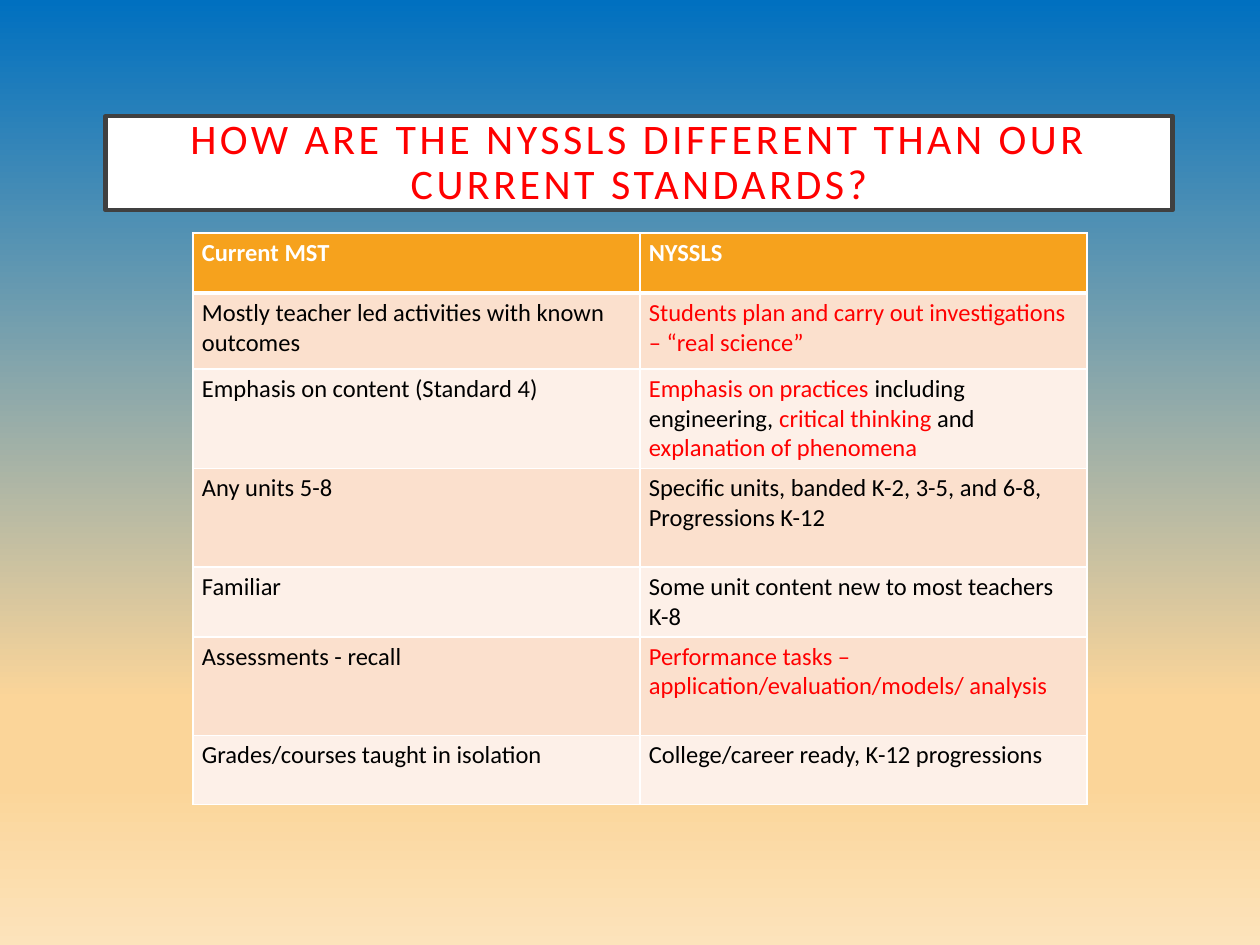
from pptx import Presentation
from pptx.dml.color import RGBColor
from pptx.enum.shapes import MSO_SHAPE
from pptx.enum.text import MSO_ANCHOR, PP_ALIGN
from pptx.oxml import parse_xml
from pptx.oxml.ns import nsdecls
from pptx.util import Cm, Pt


def paint(color, value):
    color.rgb = RGBColor.from_string(value)


def write(para, text, size, value, bold=False):
    run = para.add_run()
    run.text = text
    for key, val in {"name": "Calibri", "size": Pt(size), "bold": bold}.items():
        setattr(run.font, key, val)
    paint(run.font.color, value)
    return run


WHITE, BLACK, RED = "FFFFFF", "000000", "FF0000"
HEAD, BANDS = "F6A21D", ("FDF0E8", "FBE0CD")

deck = Presentation()
deck.slide_width, deck.slide_height = Cm(25.4), Cm(19.05)
slide = deck.slides.add_slide(deck.slide_layouts[6])

# Background gradient, top to bottom
stops = "".join(
    f'<a:gs pos="{pos * 1000}"><a:srgbClr val="{value}"/></a:gs>'
    for pos, value in ((0, "0070C0"), (74, "FBD599"), (83, "FBD599"), (100, "FCE3BB"))
)
slide.element.cSld.insert(0, parse_xml(
    f'<p:bg {nsdecls("p", "a")}><p:bgPr><a:gradFill><a:gsLst>{stops}</a:gsLst>'
    '<a:lin ang="5400000" scaled="0"/></a:gradFill><a:effectLst/></p:bgPr></p:bg>'
))

# Table: text between bars is red, a line break starts a paragraph
rows = (
    (1.21, "Current MST", "NYSSLS"),
    (1.53, "Mostly teacher led activities with known outcomes",
     "|Students plan and carry out investigations – “real science”|"),
    (1.99, "Emphasis on content (Standard 4)",
     "|Emphasis on practices |including engineering, |critical thinking |and "
     "|explanation of phenomena|"),
    (1.99, "Any units 5-8",
     "Specific units, banded K-2, 3-5, and 6-8,\nProgressions K-12"),
    (1.39, "Familiar", "Some unit content new to most teachers K-8"),
    (1.99, "Assessments - recall",
     "|Performance tasks – application/evaluation/models/ analysis|"),
    (1.39, "Grades/courses taught in isolation",
     "College/career ready, K-12 progressions"),
)
margins = {"margin_left": Cm(0.18), "margin_right": Cm(0.18),
           "margin_top": Cm(0.1), "margin_bottom": Cm(0.1)}
table = slide.shapes.add_table(
    len(rows), 2, Cm(3.89), Cm(4.7), Cm(18.02), Cm(sum(row[0] for row in rows))
).table
for col in table.columns:
    col.width = Cm(9.01)

for r, (height, *texts) in enumerate(rows):
    table.rows[r].height = Cm(height)
    for c, text in enumerate(texts):
        cell = table.cell(r, c)
        for key, val in margins.items():
            setattr(cell, key, val)
        for side in "LRTB":
            wide = 3 if (r, side) in ((0, "B"), (1, "T")) else 1
            cell._tc.get_or_add_tcPr().append(parse_xml(
                f'<a:ln{side} {nsdecls("a")} w="{Pt(wide)}"><a:solidFill>'
                f'<a:srgbClr val="{WHITE}"/></a:solidFill></a:ln{side}>'
            ))
        cell.fill.solid()
        paint(cell.fill.fore_color, BANDS[r % 2] if r else HEAD)
        for n, line in enumerate(text.split("\n")):
            frame = cell.text_frame
            para = frame.add_paragraph() if n else frame.paragraphs[0]
            for i, part in enumerate(line.split("|")):
                if part:
                    plain = BLACK if r else WHITE
                    write(para, part, 14, RED if i % 2 else plain, r == 0)

# Title box
title = slide.shapes.add_shape(
    MSO_SHAPE.RECTANGLE, Cm(2.13), Cm(2.34), Cm(21.51), Cm(1.9))
title.shadow.inherit = False
title.fill.solid()
paint(title.fill.fore_color, WHITE)
paint(title.line.color, "404040")
title.line.width = Pt(2.5)
frame = title.text_frame
box = {"word_wrap": True, "vertical_anchor": MSO_ANCHOR.MIDDLE}
box.update(dict.fromkeys(margins, Cm(0.5)))
for key, val in box.items():
    setattr(frame, key, val)
para = frame.paragraphs[0]
para.alignment, para.line_spacing = PP_ALIGN.CENTER, 0.9
run = write(para, "HOW ARE THE NYSSLS DIFFERENT THAN OUR CURRENT STANDARDS?", 24, RED)
run.font._element.set("spc", "200")

deck.save("out.pptx")
